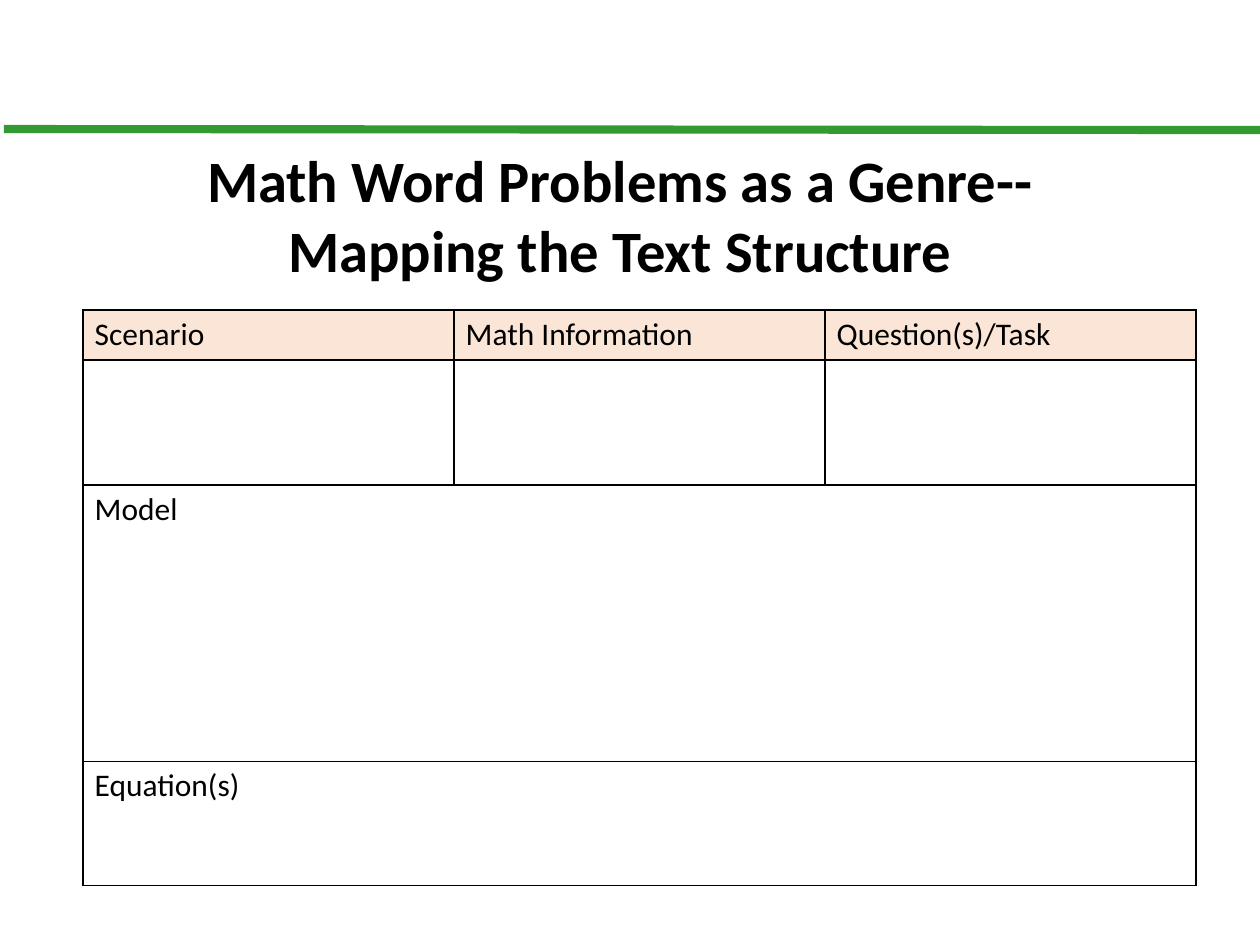
from lxml import etree
from pptx import Presentation
from pptx import util as u
from pptx.dml.color import RGBColor
from pptx.enum import shapes, text
from pptx.oxml.ns import qn

WIDTH, HEIGHT = 1260, 938
SCALE = u.Inches(10.75) / WIDTH
FONT = "Calibri"
BLACK, GREEN, PEACH = "000000", "339933", "FBE5D6"


def px(length):
    return u.Emu(round(length * SCALE))


def colour(value):
    return RGBColor.from_string(value)


def write(frame, content, size=19.3, bold=False, align=text.PP_ALIGN.LEFT):
    """Fill a text frame, one paragraph for each line of content."""
    frame.text = content
    for paragraph in frame.paragraphs:
        paragraph.alignment = align
        paragraph.font.name = FONT
        paragraph.font.size = u.Pt(size)
        paragraph.font.bold = bold
        paragraph.font.color.rgb = colour(BLACK)


def add_rule(slide, left, top, width, drop):
    line = slide.shapes.add_connector(
        shapes.MSO_CONNECTOR.STRAIGHT,
        px(left), px(top), px(left + width), px(top + drop))
    line.line.color.rgb = colour(GREEN)
    line.line.width = u.Pt(5)
    etree.SubElement(line.element.spPr, qn("a:effectLst"))


def add_title(slide, left, top, width, height):
    box = slide.shapes.add_textbox(px(left), px(top), px(width), px(height))
    box.text_frame.word_wrap = True
    write(box.text_frame,
          "Math Word Problems as a Genre--\nMapping the Text Structure",
          size=36, bold=True, align=text.PP_ALIGN.CENTER)


def add_borders(cell):
    """Draw all four edges; border elements come before the cell fill."""
    properties = cell._tc.get_or_add_tcPr()
    for position, side in enumerate(("lnL", "lnR", "lnT", "lnB")):
        edge = etree.Element(qn(f"a:{side}"), w=str(u.Pt(1)))
        fill = etree.SubElement(edge, qn("a:solidFill"))
        etree.SubElement(fill, qn("a:srgbClr"), val=BLACK)
        properties.insert(position, edge)


def add_structure_map(slide, left, top, width, row_heights):
    contents = [
        ("Scenario", "Math Information", "Question(s)/Task"),
        ("", "", ""),
        ("Model", "", ""),
        ("Equation(s)", "", ""),
    ]
    table = slide.shapes.add_table(
        len(contents), 3, px(left), px(top),
        px(width), px(sum(row_heights))).table
    table.horz_banding = False
    for column in table.columns:
        column.width = px(width / 3)
    for row, height in zip(table.rows, row_heights):
        row.height = px(height)

    for row_index, labels in enumerate(contents):
        for column_index, label in enumerate(labels):
            cell = table.cell(row_index, column_index)
            write(cell.text_frame, label)
            if row_index == 0:
                cell.fill.solid()
                cell.fill.fore_color.rgb = colour(PEACH)
            else:
                cell.fill.background()
            add_borders(cell)

    # Model and equations span the full width
    for row_index in (2, 3):
        table.cell(row_index, 0).merge(table.cell(row_index, 2))


def main():
    presentation = Presentation()
    presentation.slide_width = px(WIDTH)
    presentation.slide_height = u.Inches(8)
    slide = presentation.slides.add_slide(presentation.slide_layouts[6])

    add_rule(slide, 4, 129, WIDTH - 4, 1)
    add_title(slide, 100, 138, 1040, 154)
    add_structure_map(slide, 83, 310, 1113, (50, 125, 276, 124))

    presentation.save("out.pptx")


if __name__ == "__main__":
    main()
